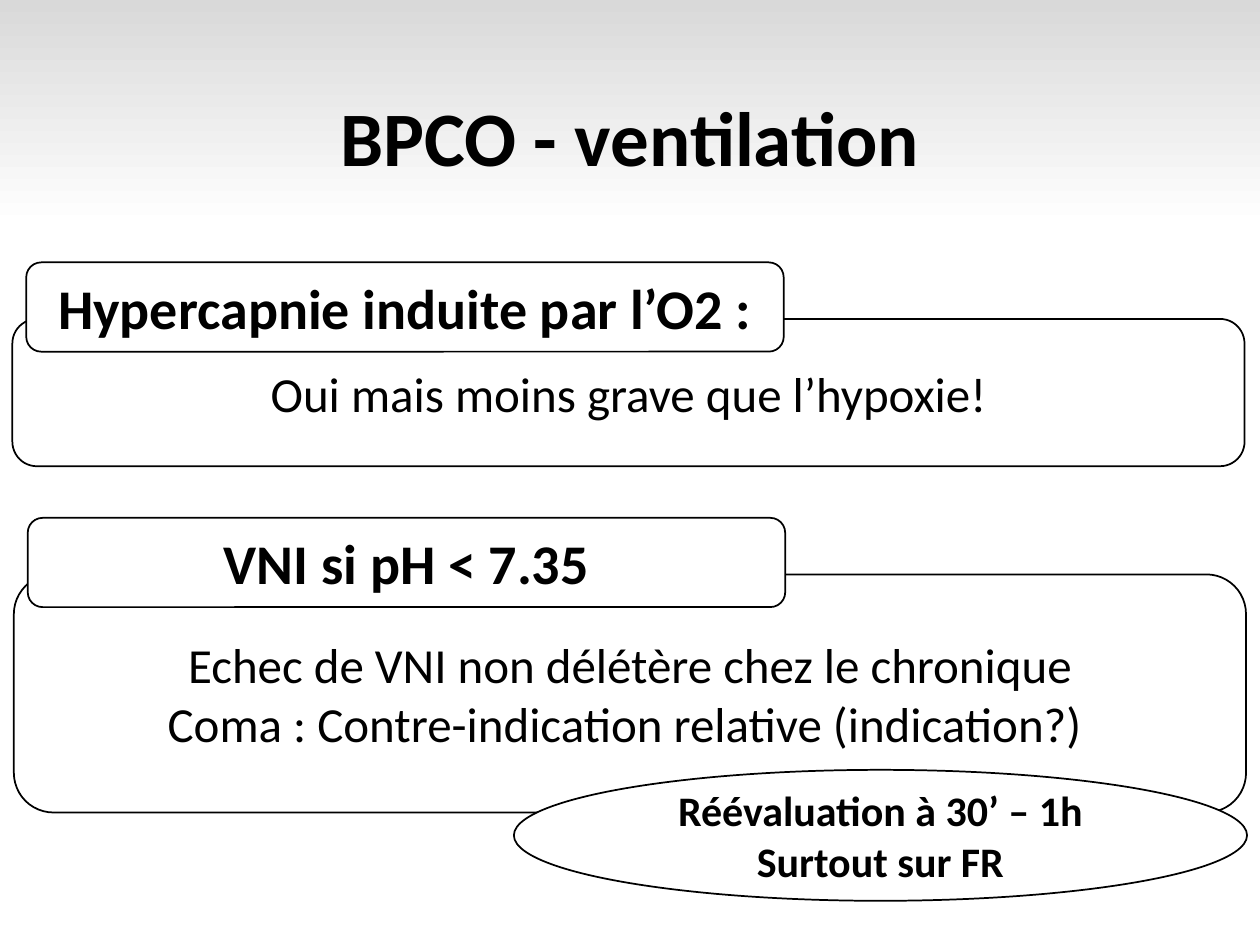
import pptx
import pptx.dml.color
import pptx.enum.shapes
import pptx.enum.text
import pptx.util

Cm = pptx.util.Cm
Shapes = pptx.enum.shapes.MSO_SHAPE
BLACK, WHITE, GREY = "000000", "FFFFFF", "D9D9D9"


def color(value):
    return pptx.dml.color.RGBColor.from_string(value)


class SlideBuilder:
    font_name = "Calibri"

    def __init__(self, deck):
        self.page = deck.slides.add_slide(deck.slide_layouts[5])

    def background(self, top, bottom, end):
        """Fade from top to bottom, complete at the fraction end."""
        fill = self.page.background.fill
        fill.gradient()
        fill.gradient_angle = 270
        for stop, value, position in zip(fill.gradient_stops, (top, bottom), (0, end)):
            stop.color.rgb = color(value)
            stop.position = position

    def add_lines(self, box, lines, size, bold, spacing=None):
        frame = box.text_frame
        frame.word_wrap = True
        frame.auto_size = pptx.enum.text.MSO_AUTO_SIZE.NONE
        frame.vertical_anchor = pptx.enum.text.MSO_ANCHOR.MIDDLE
        font_format = {"name": self.font_name, "size": pptx.util.Pt(size), "bold": bold}
        for index, line in enumerate(lines):
            para = frame.add_paragraph() if index else frame.paragraphs[0]
            para.alignment = pptx.enum.text.PP_ALIGN.CENTER
            para.line_spacing = spacing
            span = para.add_run()
            span.text = line
            for name, value in font_format.items():
                setattr(span.font, name, value)
            span.font.color.rgb = color(BLACK)

    def title(self, place, text):
        box = self.page.shapes.title
        for name, value in zip(("left", "top", "width", "height"), place):
            setattr(box, name, Cm(value))
        self.add_lines(box, [text], 44, True, 0.9)

    def panel(self, kind, place, lines, size, bold=False, fill=None):
        box = self.page.shapes.add_shape(kind, *map(Cm, place))
        box.shadow.inherit = False
        if fill:
            box.fill.solid()
            box.fill.fore_color.rgb = color(fill)
        else:
            box.fill.background()
        box.line.color.rgb = color(BLACK)
        box.line.width = pptx.util.Pt(1)
        self.add_lines(box, lines, size, bold)

    def section(self, left, top, height, heading, lines):
        """A body panel with its heading overlapping the upper edge."""
        rounded = Shapes.ROUNDED_RECTANGLE
        self.panel(rounded, (left, top, 24.84, height), lines, 28)
        self.panel(rounded, (left + 0.28, top - 1.14, 15.27, 1.8), [heading], 32, True, WHITE)


def main():
    deck = pptx.Presentation()
    deck.slide_width, deck.slide_height = Cm(25.4), Cm(19.05)
    slide = SlideBuilder(deck)

    # Background and title
    slide.background(GREY, WHITE, 0.24)
    slide.title((1.75, 1.02, 21.9, 3.68), "BPCO - ventilation")

    # Two headed sections
    slide.section(0.25, 6.43, 2.97, "Hypercapnie induite par l’O2 :",
                  ["Oui mais moins grave que l’hypoxie!"])
    slide.section(0.28, 11.58, 4.8, "VNI si pH < 7.35",
                  ["Echec de VNI non délétère chez le chronique",
                   "Coma : Contre-indication relative (indication?) "])

    # Reassessment note
    slide.panel(Shapes.OVAL, (10.36, 15.52, 14.78, 2.64),
                ["Réévaluation à 30’ – 1h", "Surtout sur FR"], 24, True, WHITE)

    deck.save("out.pptx")


if __name__ == "__main__":
    main()
